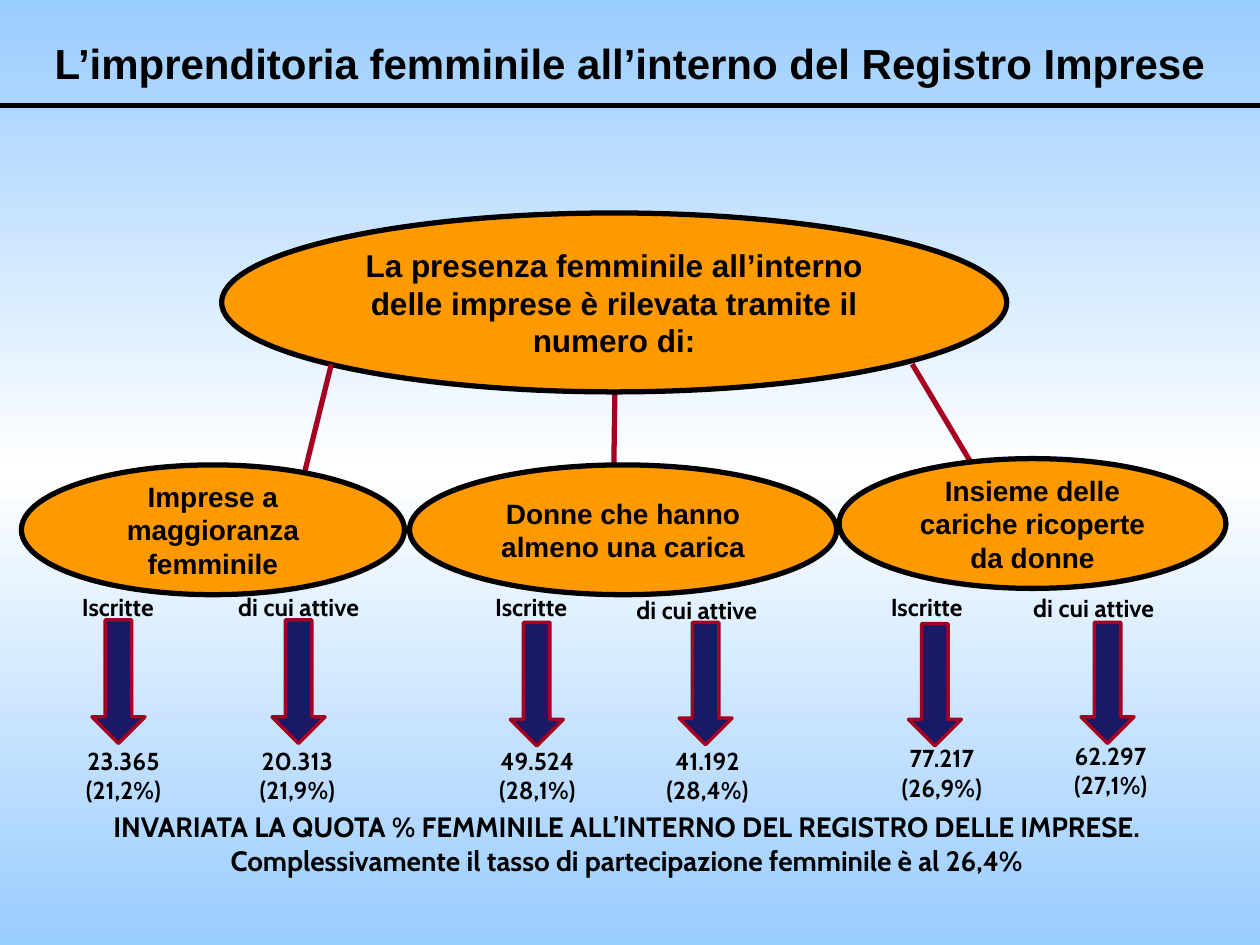
from copy import deepcopy
from dataclasses import dataclass

from pptx import Presentation
from pptx.dml.color import RGBColor
from pptx.enum import shapes, text
from pptx.oxml.ns import qn
from pptx.oxml.xmlchemy import OxmlElement
from pptx.util import Inches, Pt


@dataclass(frozen=True)
class Theme:
    black: RGBColor = RGBColor(0, 0, 0)
    white: RGBColor = RGBColor(255, 255, 255)
    sky: RGBColor = RGBColor(0x99, 0xCC, 0xFF)
    orange: RGBColor = RGBColor(0xFF, 0x99, 0x00)
    crimson: RGBColor = RGBColor(0xA5, 0x00, 0x21)
    navy: RGBColor = RGBColor(0x19, 0x19, 0x66)
    heading: str = "Arial"
    body: str = "Cabin"
    title_pt: int = 24
    main_pt: int = 18
    group_pt: int = 16
    figure_pt: int = 14
    outline_pt: int = 3
    arrow_line_pt: int = 2


@dataclass(frozen=True)
class Box:
    x: float
    y: float
    w: float
    h: float

    def emu(self) -> list:
        return [Inches(v) for v in (self.x, self.y, self.w, self.h)]


@dataclass(frozen=True)
class Figure:
    """A label, the arrow below it and the value the arrow points to."""
    label: str
    label_box: Box
    arrow_box: Box
    value: str
    share: str
    value_box: Box


@dataclass(frozen=True)
class Group:
    name: str
    box: Box
    figures: tuple


T = Theme()
ENROLLED, ACTIVE = "Iscritte", "di cui attive"
GROUPS = (
    Group("Imprese a maggioranza femminile", Box(0.17, 3.69, 3.04, 1.03), (
        Figure(ENROLLED, Box(0.29, 4.65, 1.29, 0.34), Box(0.73, 4.92, 0.42, 0.98),
               "23.365", "(21,2%)", Box(0.43, 5.87, 1.1, 0.57)),
        Figure(ACTIVE, Box(1.68, 4.65, 1.38, 0.34), Box(2.16, 4.92, 0.42, 0.98),
               "20.313", "(21,9%)", Box(1.81, 5.87, 1.1, 0.57)))),
    Group("Donne che hanno almeno una carica", Box(3.25, 3.69, 3.39, 1.03), (
        Figure(ENROLLED, Box(3.57, 4.65, 1.29, 0.34), Box(4.05, 4.94, 0.42, 0.98),
               "49.524", "(28,1%)", Box(3.66, 5.87, 1.21, 0.57)),
        Figure(ACTIVE, Box(4.84, 4.67, 1.38, 0.34), Box(5.39, 4.94, 0.42, 0.97),
               "41.192", "(28,4%)", Box(5.01, 5.87, 1.21, 0.57)))),
    Group("Insieme delle cariche ricoperte da donne", Box(6.66, 3.64, 3.07, 1.03), (
        Figure(ENROLLED, Box(6.71, 4.65, 1.29, 0.34), Box(7.21, 4.95, 0.42, 0.97),
               "77.217", "(26,9%)", Box(6.87, 5.85, 1.21, 0.57)),
        Figure(ACTIVE, Box(7.99, 4.66, 1.38, 0.34), Box(8.58, 4.94, 0.42, 0.96),
               "62.297", "(27,1%)", Box(8.21, 5.83, 1.21, 0.57)))),
)


def write(tf, lines: list, font: str, size: int, anchor=text.MSO_ANCHOR.TOP) -> None:
    tf.word_wrap = True
    tf.vertical_anchor = anchor
    for i, line in enumerate(lines):
        p = tf.add_paragraph() if i else tf.paragraphs[0]
        p.text = line
        p.alignment = text.PP_ALIGN.CENTER
        p.font.name, p.font.size, p.font.bold = font, Pt(size), True
        p.font.color.rgb = T.black


def add_text(s, box: Box, lines: list, size: int) -> None:
    tf = s.shapes.add_textbox(*box.emu()).text_frame
    write(tf, lines, T.body, size)
    tf.auto_size = text.MSO_AUTO_SIZE.SHAPE_TO_FIT_TEXT


def add_shape(s, kind, box: Box, fill: RGBColor, line: RGBColor, width: int):
    sp = s.shapes.add_shape(kind, *box.emu())
    sp.shadow.inherit = False
    sp.fill.solid()
    sp.fill.fore_color.rgb = fill
    sp.line.color.rgb = line
    sp.line.width = Pt(width)
    return sp


def add_ellipse(s, box: Box, label: str, size: int) -> None:
    sp = add_shape(s, shapes.MSO_SHAPE.OVAL, box, T.orange, T.black, T.outline_pt)
    write(sp.text_frame, [label], T.heading, size, text.MSO_ANCHOR.MIDDLE)


def add_line(s, start: tuple, end: tuple, color: RGBColor, arrow: bool = False) -> None:
    ends = [Inches(v) for v in (*start, *end)]
    cx = s.shapes.add_connector(shapes.MSO_CONNECTOR.STRAIGHT, *ends)
    cx.line.color.rgb = color
    cx.line.width = Pt(T.outline_pt)
    if arrow:
        head = OxmlElement("a:tailEnd")
        head.set("type", "arrow")
        cx.line._get_or_add_ln().append(head)
    cx._element.spPr.append(OxmlElement("a:effectLst"))


def set_background(s) -> None:
    fill = s.background.fill
    fill.gradient()
    fill.gradient_angle = 270
    stops = s._element.find(".//" + qn("a:gsLst"))
    stops.append(deepcopy(stops[-1]))
    for stop, pos, color in zip(fill.gradient_stops, (0, 0.5, 1),
                                (T.sky, T.white, T.sky)):
        stop.position = pos
        stop.color.rgb = color


def add_figure(s, fig: Figure) -> None:
    add_text(s, fig.label_box, [fig.label], T.figure_pt)
    add_shape(s, shapes.MSO_SHAPE.DOWN_ARROW, fig.arrow_box,
              T.navy, T.crimson, T.arrow_line_pt)
    add_text(s, fig.value_box, [fig.value, fig.share], T.figure_pt)


def main() -> None:
    prs = Presentation()
    prs.slide_width, prs.slide_height = Inches(10), Inches(7.5)
    s = prs.slides.add_slide(prs.slide_layouts[5])
    set_background(s)

    # Title and rule
    title = s.shapes.title
    title.left, title.top, title.width, title.height = Box(0, 0.21, 10, 0.58).emu()
    write(title.text_frame, ["L’imprenditoria femminile all’interno del Registro Imprese"],
          T.heading, T.title_pt, text.MSO_ANCHOR.MIDDLE)
    add_line(s, (0, 0.84), (10, 0.84), T.black)

    # Main statement, with links that run behind the group ellipses
    add_line(s, (4.88, 3.11), (4.86, 4.54), T.crimson, arrow=True)
    add_ellipse(s, Box(1.76, 1.69, 6.23, 1.42),
                "La presenza femminile all’interno delle imprese è rilevata "
                "tramite il numero di:", T.main_pt)
    add_line(s, (7.24, 2.89), (8.29, 4.65), T.crimson, arrow=True)
    add_line(s, (2.63, 2.89), (2.19, 4.67), T.crimson, arrow=True)

    # Three groups and their figures
    for group in GROUPS:
        add_ellipse(s, group.box, group.name, T.group_pt)
        for fig in group.figures:
            add_figure(s, fig)

    # Conclusion
    add_text(s, Box(0.13, 6.38, 9.69, 0.64),
             ["INVARIATA LA QUOTA % FEMMINILE ALL’INTERNO DEL REGISTRO DELLE IMPRESE. "
              "Complessivamente il tasso di partecipazione femminile è al 26,4%"],
             T.group_pt)
    prs.save("out.pptx")


if __name__ == "__main__":
    main()
